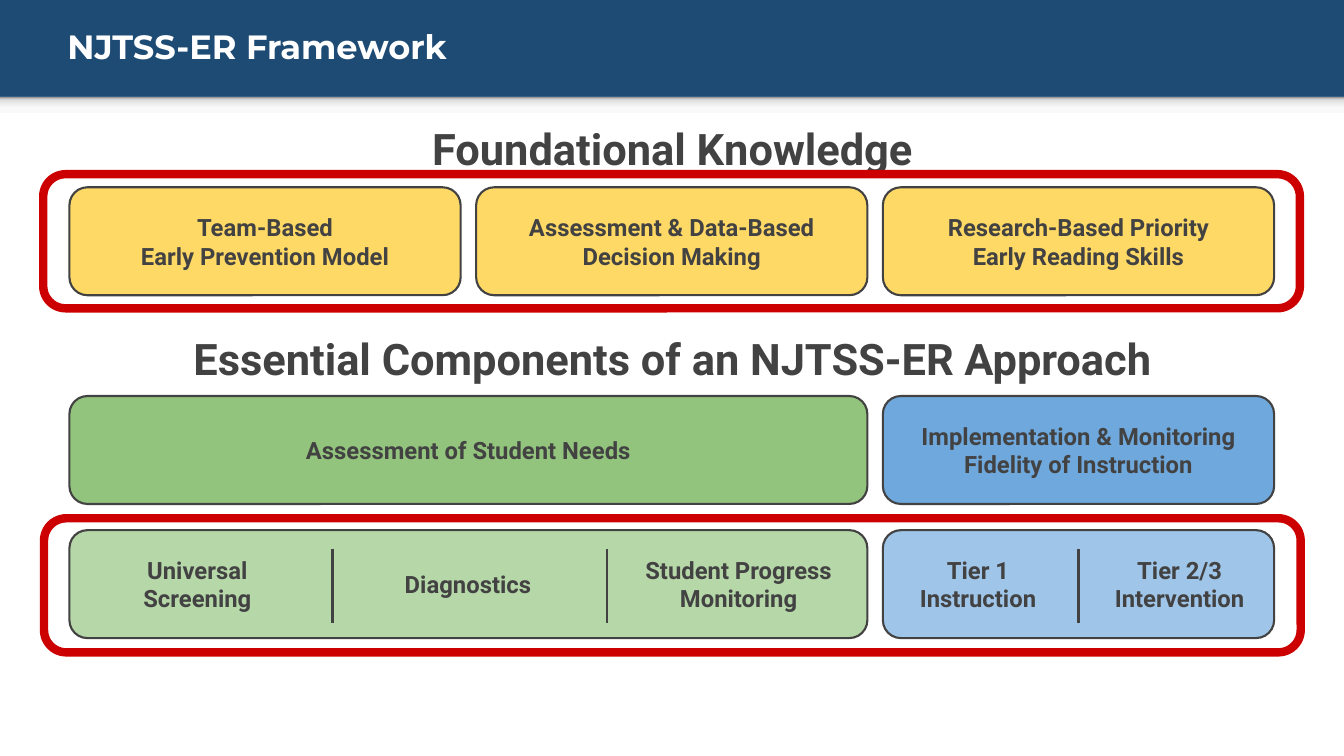
from lxml import etree
from pptx import Presentation
from pptx.dml.color import RGBColor
from pptx.enum.shapes import MSO_CONNECTOR, MSO_SHAPE
from pptx.enum.text import MSO_ANCHOR, PP_ALIGN
from pptx.oxml.ns import qn
from pptx.util import Cm, Pt

RECT, ROUND = MSO_SHAPE.RECTANGLE, MSO_SHAPE.ROUNDED_RECTANGLE
STRAIGHT = MSO_CONNECTOR.STRAIGHT
MIDDLE = MSO_ANCHOR.MIDDLE
LEFT, CENTER = PP_ALIGN.LEFT, PP_ALIGN.CENTER

NAVY, WHITE, INK, RED = "1E4B74", "FFFFFF", "424242", "CC0000"
YELLOW, GREEN, BLUE = "FFD966", "93C47D", "6FA8DC"
LIGHT_GREEN, LIGHT_BLUE = "B6D7A8", "9FC5E8"

SLIDE_W, SLIDE_H = 33.87, 19.05
MARGIN, COLUMN, STEP = 1.75, 9.86, 10.25
WIDE = STEP + COLUMN
THIRD_X = MARGIN + 2 * STEP
BOX_H, LABEL_H = 2.72, 2.9
KNOWLEDGE_Y, COMPONENT_Y, DETAIL_Y = 4.72, 9.98, 13.36


def rgb(value):
    """Turn a hex string into a colour."""
    return RGBColor.from_string(value)


class FrameworkSlide:
    """Draws the elements of the framework slide in one style."""

    def __init__(self, prs):
        """Add a title-only slide with a navy background."""
        self.s = prs.slides.add_slide(prs.slide_layouts[5])
        fill = self.s.background.fill
        fill.solid()
        fill.fore_color.rgb = rgb(NAVY)

    def set_text(self, tf, text, size, font="Roboto", color=INK, align=CENTER, inset=0.25):
        """Fill a text frame with bold, vertically centred text."""
        tf.text = text
        tf.word_wrap = True
        tf.vertical_anchor = MIDDLE
        tf.margin_left = tf.margin_right = tf.margin_top = tf.margin_bottom = Cm(inset)
        for p in tf.paragraphs:
            p.alignment = align
            for r in p.runs:
                r.font.name, r.font.size, r.font.bold = font, Pt(size), True
                r.font.color.rgb = rgb(color)

    def title(self, text):
        """Place and format the title placeholder."""
        sp = self.s.shapes.title
        sp.left, sp.top, sp.width, sp.height = Cm(1.37), Cm(0.05), Cm(31.67), Cm(2.24)
        self.set_text(sp.text_frame, text, 24, "Montserrat", WHITE, LEFT, 0.33)

    def shape(self, kind, x, y, w, h, fill=None, line=None, weight=1.5):
        """Add a preset shape with an optional fill and outline."""
        sp = self.s.shapes.add_shape(kind, Cm(x), Cm(y), Cm(w), Cm(h))
        sp.shadow.inherit = False
        if fill:
            sp.fill.solid()
            sp.fill.fore_color.rgb = rgb(fill)
        else:
            sp.fill.background()
        if line:
            sp.line.color.rgb = rgb(line)
            sp.line.width = Pt(weight)
        else:
            sp.line.fill.background()
        return sp

    def header_shade(self, y, h, stops):
        """Add a full-width strip that fades downwards."""
        sp = self.shape(RECT, 0, y, SLIDE_W, h)
        sp.fill.gradient()
        sp.fill.gradient_angle = 90
        gs_list = sp._element.spPr.find(qn("a:gradFill")).find(qn("a:gsLst"))
        for gs in list(gs_list):
            gs_list.remove(gs)
        for percent, color in stops:
            gs = etree.SubElement(gs_list, qn("a:gs"), pos=str(percent * 1000))
            etree.SubElement(gs, qn("a:srgbClr"), val=color)

    def box(self, x, y, w, fill):
        """Add an outlined rounded box."""
        self.shape(ROUND, x, y, w, BOX_H, fill, INK)

    def label(self, x, y, w, text, size=17):
        """Add a centred text box."""
        tb = self.s.shapes.add_textbox(Cm(x), Cm(y), Cm(w), Cm(LABEL_H))
        self.set_text(tb.text_frame, text, size)

    def split_box(self, x, y, w, fill, texts, cell, step):
        """Add a rounded box holding a row of labels."""
        self.box(x, y, w, fill)
        for i, text in enumerate(texts):
            self.label(x + i * step, y + (BOX_H - LABEL_H) / 2, cell, text)

    def labelled_box(self, x, y, w, fill, text):
        """Add a rounded box with one label centred over it."""
        self.split_box(x, y, w, fill, [text], w, w)

    def divider(self, x, top, bottom):
        """Add a vertical line."""
        line = self.s.shapes.add_connector(STRAIGHT, Cm(x), Cm(top), Cm(x), Cm(bottom))
        line.line.color.rgb = rgb(INK)
        line.line.width = Pt(1.5)
        etree.SubElement(line._element.spPr, qn("a:effectLst"))

    def highlight(self, x, y):
        """Add a thick red frame around a row."""
        self.shape(ROUND, x, y, 31.67, 3.38, line=RED, weight=6)


def main():
    """Build the slide and save it."""
    prs = Presentation()
    prs.slide_width, prs.slide_height = Cm(SLIDE_W), Cm(SLIDE_H)
    slide = FrameworkSlide(prs)

    slide.shape(RECT, 0, 2.44, SLIDE_W, SLIDE_H - 2.44, WHITE)
    slide.header_shade(2.44, 0.41, [(0, "F9F9F9"), (36, "F9F9F9"), (80, "DEDEDE"), (100, "999999")])
    slide.title("NJTSS-ER Framework")

    slide.label(MARGIN, 2.29, 30.38, "Foundational Knowledge", 31)
    knowledge = ["Team-Based\nEarly Prevention Model",
                 "Assessment & Data-Based\vDecision Making",
                 "Research-Based Priority\nEarly Reading Skills"]
    for i, text in enumerate(knowledge):
        slide.labelled_box(MARGIN + i * STEP, KNOWLEDGE_Y, COLUMN, YELLOW, text)
    slide.highlight(1.09, 4.39)

    slide.label(MARGIN, 7.57, 30.38, "Essential Components of an NJTSS-ER Approach", 31)
    slide.labelled_box(MARGIN, COMPONENT_Y, WIDE, GREEN, "Assessment of Student Needs")
    slide.labelled_box(THIRD_X, COMPONENT_Y, COLUMN, BLUE,
                       "Implementation & Monitoring Fidelity of Instruction")

    slide.highlight(1.11, 13.06)
    assessments = ["Universal\nScreening", "Diagnostics", "Student Progress\nMonitoring"]
    slide.split_box(MARGIN, DETAIL_Y, WIDE, LIGHT_GREEN, assessments, 6.45, 6.82)
    tiers = ["Tier 1\nInstruction", "Tier 2/3\nIntervention"]
    slide.split_box(THIRD_X, DETAIL_Y, COLUMN, LIGHT_BLUE, tiers, 4.8, 5.08)
    for x in (8.38, 15.29, 27.18):
        slide.divider(x, 13.84, 15.7)

    prs.save("out.pptx")


if __name__ == "__main__":
    main()
